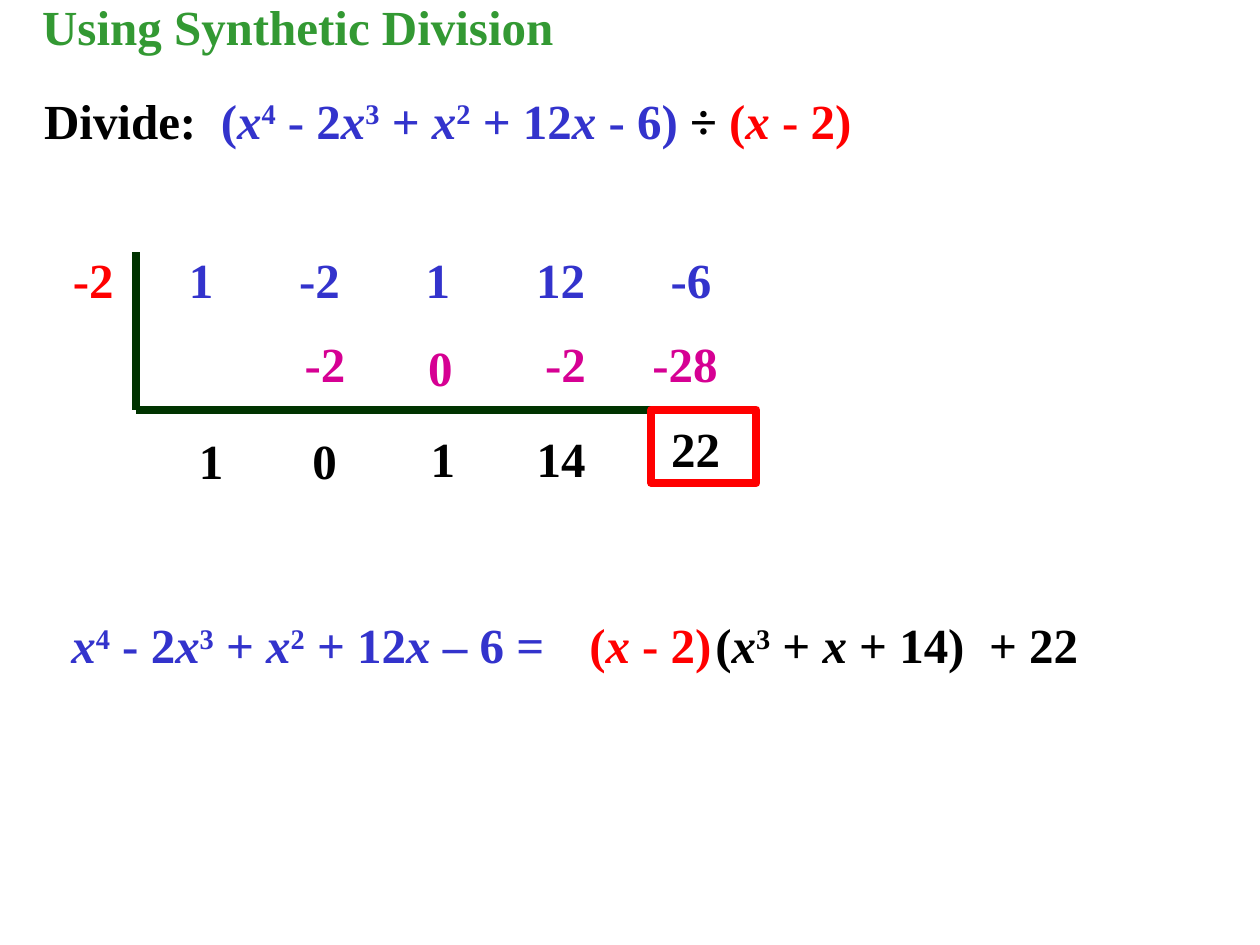
import enum
import pptx
import pptx.dml.color
import pptx.enum.shapes
import pptx.enum.text
import pptx.oxml.ns
import pptx.util
import lxml.etree

Cm = pptx.util.Cm


class Theme(enum.Enum):
    blue = "3333CC"
    red = "FF0000"
    pink = "D60093"
    black = "000000"
    green = "339933"
    dark = "003300"
    font = "Times New Roman"
    size = pptx.util.Pt(28)
    rule = pptx.util.Pt(4.5)


def tint(name):
    return pptx.dml.color.RGBColor.from_string(Theme[name].value)


def write(left, top, width, *parts):
    box = slide.shapes.add_textbox(Cm(left), Cm(top), Cm(width), Cm(1.45))
    frame = box.text_frame
    frame.word_wrap = False
    frame.auto_size = pptx.enum.text.MSO_AUTO_SIZE.SHAPE_TO_FIT_TEXT
    line = frame.paragraphs[0]
    for color, text in parts:
        for piece in text.split("|"):
            run = line.add_run()
            run.text = piece.lstrip("^")
            form = {"name": Theme.font.value, "size": Theme.size.value,
                    "bold": True, "italic": piece.strip() == "x"}
            for key, value in form.items():
                setattr(run.font, key, value)
            run.font.color.rgb = tint(color)
            if piece.startswith("^"):
                run.font._element.set("baseline", "30000")
    return box


deck = pptx.Presentation()
deck.slide_width, deck.slide_height = Cm(25.4), Cm(19.05)
slide = deck.slides.add_slide(deck.slide_layouts[6])

write(0.6, -0.2, 10.85, ("green", "Using Synthetic Division"))
write(0.64, 1.7, 16.97, ("black", "Divide:  "),
      ("blue", "(|x|^4| - 2|x|^3| + |x|^2| + 12|x| - 6)"),
      ("black", " ÷ "), ("red", "(|x| - 2)"))

write(1.22, 4.9, 1.35, ("red", "-2"))
top = write(3.56, 4.9, 11.2, ("blue", "1\t-2\t1\t12\t-6"))
top.text_frame.word_wrap = True
prop = top.text_frame.paragraphs[0]._p.get_or_add_pPr()
tabs = lxml.etree.SubElement(prop, pptx.oxml.ns.qn("a:tabLst"))
for stop in (2.22, 4.77, 7, 9.71):
    lxml.etree.SubElement(tabs, pptx.oxml.ns.qn("a:tab"),
                          pos=str(int(Cm(stop))), algn="l")

for color, left, height, width, text in (
    ("pink", 5.89, 6.6, 1.35, "-2"),
    ("pink", 8.38, 6.68, 1.02, "0"),
    ("pink", 10.74, 6.6, 1.35, "-2"),
    ("pink", 12.9, 6.6, 1.83, "-28"),
    ("black", 3.76, 8.56, 1.02, "1"),
    ("black", 6.05, 8.56, 1.02, "0"),
    ("black", 8.43, 8.51, 1.02, "1"),
    ("black", 10.57, 8.51, 1.5, "14"),
    ("black", 13.28, 8.31, 1.5, "22"),
):
    write(left, height, width, (color, text))

for ends in ((2.75, 5.08, 2.75, 8.26), (2.75, 8.26, 15.03, 8.26)):
    bar = slide.shapes.add_connector(
        pptx.enum.shapes.MSO_CONNECTOR.STRAIGHT, *map(Cm, ends))
    bar.line.color.rgb = tint("dark")
    bar.line.width = Theme.rule.value
    lxml.etree.SubElement(bar._element.spPr, pptx.oxml.ns.qn("a:effectLst"))

rest = slide.shapes.add_shape(pptx.enum.shapes.MSO_SHAPE.RECTANGLE,
                              Cm(13.13), Cm(8.26), Cm(2.12), Cm(1.48))
rest.shadow.inherit = False
rest.fill.background()
rest.line.color.rgb = tint("red")
rest.line.width = Theme.rule.value

for left, width, color, text in (
    (1.19, 10.29, "blue", "x|^4| - 2|x|^3| + |x|^2| + 12|x |– 6 ="),
    (11.63, 3, "red", "(|x| - 2)"),
    (14.17, 5.59, "black", "(|x|^3| + |x| + 14)"),
    (19.69, 2.31, "black", "+ 22"),
):
    write(left, 12.27, width, (color, text))

deck.save("out.pptx")
